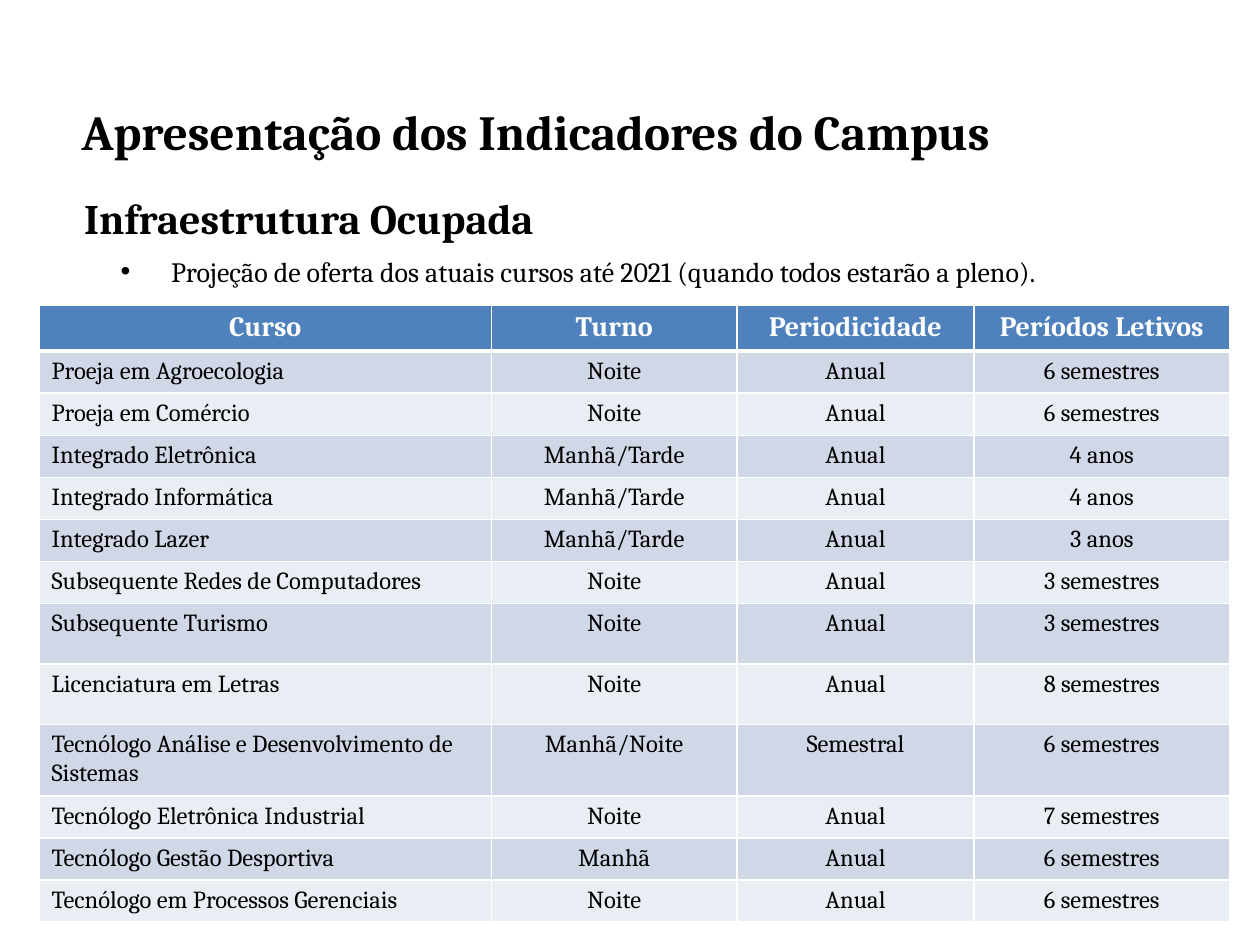
from lxml.etree import SubElement
from pptx import Presentation
from pptx.dml.color import RGBColor
from pptx.enum.text import MSO_ANCHOR, PP_ALIGN
from pptx.oxml.ns import qn
from pptx.util import Inches, Pt


def color(hex_value):
    return RGBColor.from_string(hex_value)


def write(paragraph, text, size, bold, hex_value="000000", alignment=PP_ALIGN.LEFT):
    paragraph.alignment = alignment
    run = paragraph.add_run()
    run.text = text
    for name, value in {"name": "Cambria", "size": Pt(size), "bold": bold}.items():
        setattr(run.font, name, value)
    run.font.color.rgb = color(hex_value)


presentation = Presentation()
presentation.slide_width = Inches(10)
presentation.slide_height = Inches(7.5)
column_unit = presentation.slide_width / 100
row_unit = presentation.slide_height / 75
slide = presentation.slides.add_slide(presentation.slide_layouts[6])

frames = []
for left, top, width, height in [(5.5, 7.6, 90.6, 5.7), (4.7, 14.8, 90.6, 8.7)]:
    box = slide.shapes.add_textbox(
        int(left * column_unit), int(top * row_unit),
        int(width * column_unit), int(height * row_unit))
    box.text_frame.word_wrap = True
    frames.append(box.text_frame)
title_frame, section_frame = frames

write(title_frame.paragraphs[0], "Apresentação dos Indicadores do Campus", 28, True)

heading = section_frame.paragraphs[0]
projection = section_frame.add_paragraph()
for paragraph, margin, indent in [(heading, 15.8, -14.8), (projection, 7.9, -4)]:
    properties = paragraph._p.get_or_add_pPr()
    properties.set("marL", str(int(margin * column_unit)))
    properties.set("indent", str(int(indent * column_unit)))
    paragraph.level = 1
SubElement(heading._p.get_or_add_pPr(), qn("a:buNone"))
bullet_properties = projection._p.get_or_add_pPr()
SubElement(bullet_properties, qn("a:buFont")).set("typeface", "Arial")
SubElement(bullet_properties, qn("a:buChar")).set("char", "•")
projection.space_before = Pt(6.5)
write(heading, "Infraestrutura Ocupada", 24, True, alignment=PP_ALIGN.JUSTIFY)
write(projection, "Projeção de oferta dos atuais cursos até 2021 (quando todos estarão a pleno).", 16, False)

courses = [
    ("Curso", "Turno", "Periodicidade", "Períodos Letivos"),
    ("Proeja em Agroecologia", "Noite", "Anual", "6 semestres"),
    ("Proeja em Comércio", "Noite", "Anual", "6 semestres"),
    ("Integrado Eletrônica", "Manhã/Tarde", "Anual", "4 anos"),
    ("Integrado Informática", "Manhã/Tarde", "Anual", "4 anos"),
    ("Integrado Lazer", "Manhã/Tarde", "Anual", "3 anos"),
    ("Subsequente Redes de Computadores", "Noite", "Anual", "3 semestres"),
    ("Subsequente Turismo", "Noite", "Anual", "3 semestres"),
    ("Licenciatura em Letras", "Noite", "Anual", "8 semestres"),
    ("Tecnólogo Análise e Desenvolvimento de Sistemas", "Manhã/Noite", "Semestral", "6 semestres"),
    ("Tecnólogo Eletrônica Industrial", "Noite", "Anual", "7 semestres"),
    ("Tecnólogo Gestão Desportiva", "Manhã", "Anual", "6 semestres"),
    ("Tecnólogo em Processos Gerenciais", "Noite", "Anual", "6 semestres"),
]
column_widths = [35.9, 19.5, 18.8, 20.3]
row_heights = [3.1] * 7 + [4.8] * 3 + [3.1] * 3

table = slide.shapes.add_table(
    len(courses), len(column_widths),
    int(3.1 * column_unit), int(24.2 * row_unit),
    int(sum(column_widths) * column_unit), int(sum(row_heights) * row_unit)).table
for column, width in zip(table.columns, column_widths):
    column.width = int(width * column_unit)
for row, height in zip(table.rows, row_heights):
    row.height = int(height * row_unit)

for row_index, course in enumerate(courses):
    is_header = row_index == 0
    fill = "4F81BD" if is_header else ("E9EDF4", "D0D8E8")[row_index % 2]
    border_widths = {
        "lnL": 1, "lnR": 1,
        "lnT": 3 if row_index == 1 else 1,
        "lnB": 3 if is_header else 1,
    }
    for column_index, text in enumerate(course):
        cell = table.cell(row_index, column_index)
        cell.vertical_anchor = MSO_ANCHOR.TOP
        cell_properties = cell._tc.get_or_add_tcPr()
        for tag, width in border_widths.items():
            line = SubElement(cell_properties, qn(f"a:{tag}"), w=str(Pt(width)))
            SubElement(SubElement(line, qn("a:solidFill")), qn("a:srgbClr"), val="FFFFFF")
        cell.fill.solid()
        cell.fill.fore_color.rgb = color(fill)
        centered = is_header or column_index > 0
        write(cell.text_frame.paragraphs[0], text,
              16 if is_header else 14, is_header,
              "FFFFFF" if is_header else "000000",
              PP_ALIGN.CENTER if centered else PP_ALIGN.LEFT)

presentation.save("out.pptx")
